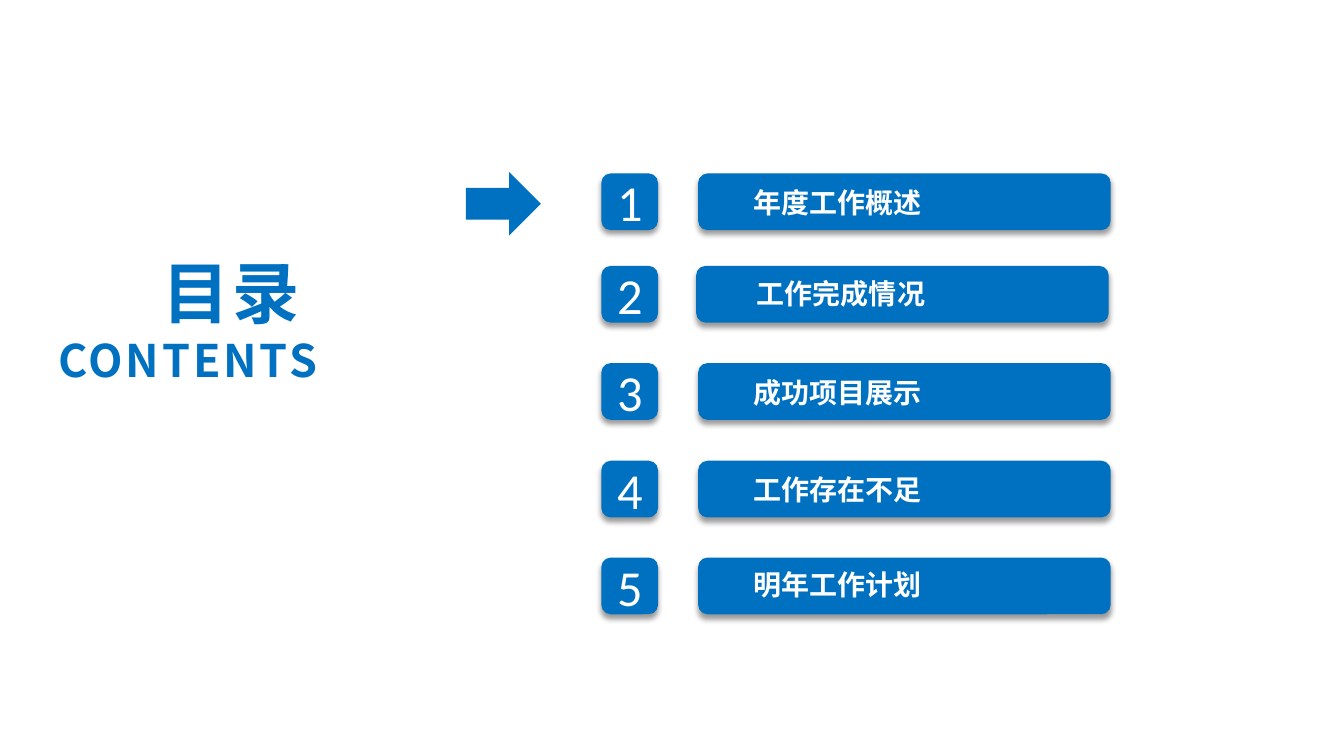
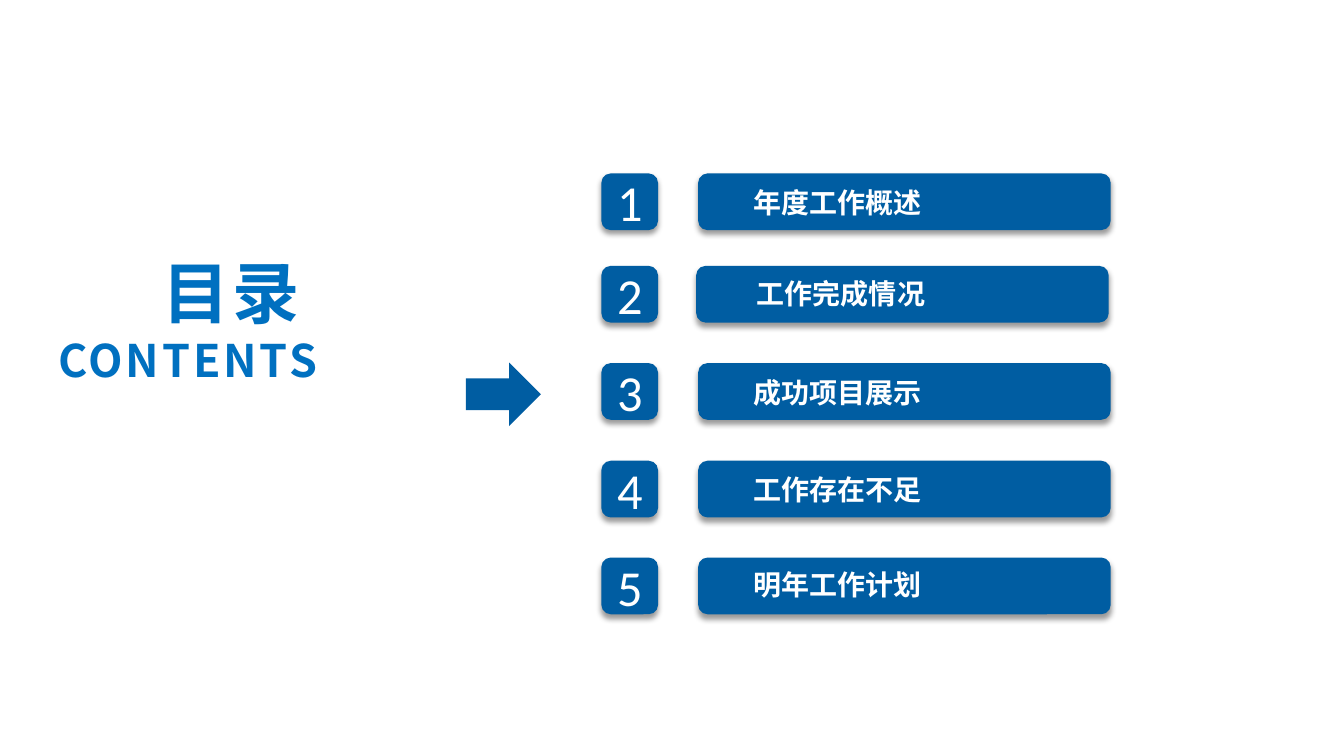
from dataclasses import dataclass

from lxml import etree
from pptx import Presentation
from pptx.dml.color import RGBColor
from pptx.enum.shapes import MSO_SHAPE
from pptx.enum.text import MSO_ANCHOR, MSO_AUTO_SIZE, PP_ALIGN
from pptx.oxml.ns import qn
from pptx.shapes.autoshape import Shape
from pptx.shapes.shapetree import GroupShapes, SlideShapes
from pptx.slide import Slide
from pptx.text.text import TextFrame
from pptx.util import Cm, Pt

ROUNDED = MSO_SHAPE.ROUNDED_RECTANGLE
DOWN_ARROW = MSO_SHAPE.DOWN_ARROW
MIDDLE = MSO_ANCHOR.MIDDLE
TOP = MSO_ANCHOR.TOP
GROW = MSO_AUTO_SIZE.SHAPE_TO_FIT_TEXT
LEFT = PP_ALIGN.LEFT
CENTER = PP_ALIGN.CENTER
RIGHT = PP_ALIGN.RIGHT

COLORS = {
    "bright": "0070C0",
    "deep": "005DA2",
    "white": "FFFFFF",
    "shadow": "000000",
}
LATIN_FONT = "Calibri"
CHINESE_FONT = "Noto Sans CJK SC"

ROW_HEIGHT = 1.43
NUMBER_LEFT = 15.16
BAR_WIDTH = 10.4
LABEL_HEIGHT = 1.19
ARROW_LEFT, ARROW_WIDTH, ARROW_HEIGHT = 11.89, 1.6, 1.89


@dataclass(frozen=True)
class Chapter:
    title: str
    top: float
    bar_left: float = 17.6
    label_left: float = 18.67
    label_drop: float = 0.13
    label_width: float = 7.6


@dataclass(frozen=True)
class Agenda:
    color: str
    arrow_top: float


CHAPTERS = (
    Chapter("年度工作概述", 4.37, label_width=7.37),
    Chapter("工作完成情况", 6.7, bar_left=17.55, label_left=18.75,
            label_drop=0.1, label_width=7.37),
    Chapter("成功项目展示", 9.15),
    Chapter("工作存在不足", 11.61),
    Chapter("明年工作计划", 14.05, label_drop=0.08),
)
AGENDAS = (Agenda("bright", 4.19), Agenda("deep", 8.99))


def set_margins(frame: TextFrame) -> None:
    frame.word_wrap = True
    frame.margin_left = frame.margin_right = Cm(0.33)
    frame.margin_top = frame.margin_bottom = Cm(0.17)


def write(frame: TextFrame, text: str, *, size: float, color: str,
          font: str = CHINESE_FONT, bold: bool = False,
          align: PP_ALIGN = LEFT, anchor: MSO_ANCHOR = TOP,
          spacing: float = 0) -> None:
    frame.vertical_anchor = anchor
    paragraph = frame.add_paragraph() if frame.text else frame.paragraphs[0]
    paragraph.alignment = align
    run = paragraph.add_run()
    run.text = text
    run.font.size = Pt(size)
    run.font.bold = bold
    run.font.name = font
    run.font.color.rgb = RGBColor.from_string(COLORS[color])
    properties = run.font._element
    if spacing:
        properties.set("spc", str(round(spacing * 100)))
    east_asian = etree.Element(qn("a:ea"), typeface=font)
    properties.find(qn("a:latin")).addnext(east_asian)


def add_filled(shapes: SlideShapes | GroupShapes, preset: MSO_SHAPE,
               left: float, top: float, width: float, height: float,
               color: str) -> Shape:
    shape = shapes.add_shape(preset, Cm(left), Cm(top), Cm(width), Cm(height))
    shape.fill.solid()
    shape.fill.fore_color.rgb = RGBColor.from_string(COLORS[color])
    shape.line.fill.background()
    shape.shadow.inherit = False
    set_margins(shape.text_frame)
    return shape


def add_shadow(shape: Shape) -> None:
    effects = shape._element.spPr.find(qn("a:effectLst"))
    shadow = etree.SubElement(
        effects, qn("a:outerShdw"), blurRad=str(Pt(4)), dist=str(Pt(3)),
        dir="5400000", algn="t", rotWithShape="0")
    tint = etree.SubElement(shadow, qn("a:srgbClr"), val=COLORS["shadow"])
    etree.SubElement(tint, qn("a:alpha"), val="40000")


def add_textbox(shapes: SlideShapes | GroupShapes, left: float, top: float,
                width: float, height: float) -> TextFrame:
    box = shapes.add_textbox(Cm(left), Cm(top), Cm(width), Cm(height))
    frame = box.text_frame
    set_margins(frame)
    frame.auto_size = GROW
    return frame


def add_chapter(slide: Slide, number: int, chapter: Chapter,
                color: str) -> None:
    badge = add_filled(slide.shapes, ROUNDED, NUMBER_LEFT, chapter.top,
                       ROW_HEIGHT, ROW_HEIGHT, color)
    add_shadow(badge)
    write(badge.text_frame, str(number), size=36, color="white",
          font=LATIN_FONT, align=CENTER, anchor=MIDDLE)

    entry = slide.shapes.add_group_shape().shapes
    bar = add_filled(entry, ROUNDED, chapter.bar_left, chapter.top,
                     BAR_WIDTH, ROW_HEIGHT, color)
    add_shadow(bar)
    label = add_textbox(entry, chapter.label_left,
                        chapter.top + chapter.label_drop,
                        chapter.label_width, LABEL_HEIGHT)
    write(label, chapter.title, size=20, color="white", bold=True)


def add_heading(slide: Slide) -> None:
    heading = add_textbox(slide.shapes, 0.53, 6.17, 7.8, 3.76)
    for text, size in (("目录 ", 48), ("CONTENTS", 32)):
        write(heading, text, size=size, color="bright", bold=True,
              align=RIGHT, spacing=2)


def add_agenda(slide: Slide, agenda: Agenda) -> None:
    for number, chapter in enumerate(CHAPTERS, start=1):
        add_chapter(slide, number, chapter, agenda.color)
    add_heading(slide)
    pointer = add_filled(slide.shapes, DOWN_ARROW, ARROW_LEFT,
                         agenda.arrow_top, ARROW_WIDTH, ARROW_HEIGHT,
                         agenda.color)
    pointer.rotation = 270


def main() -> None:
    presentation = Presentation()
    presentation.slide_width = Cm(33.88)
    presentation.slide_height = Cm(19.05)
    blank = presentation.slide_layouts[6]
    for agenda in AGENDAS:
        add_agenda(presentation.slides.add_slide(blank), agenda)
    presentation.save("out.pptx")


if __name__ == "__main__":
    main()
